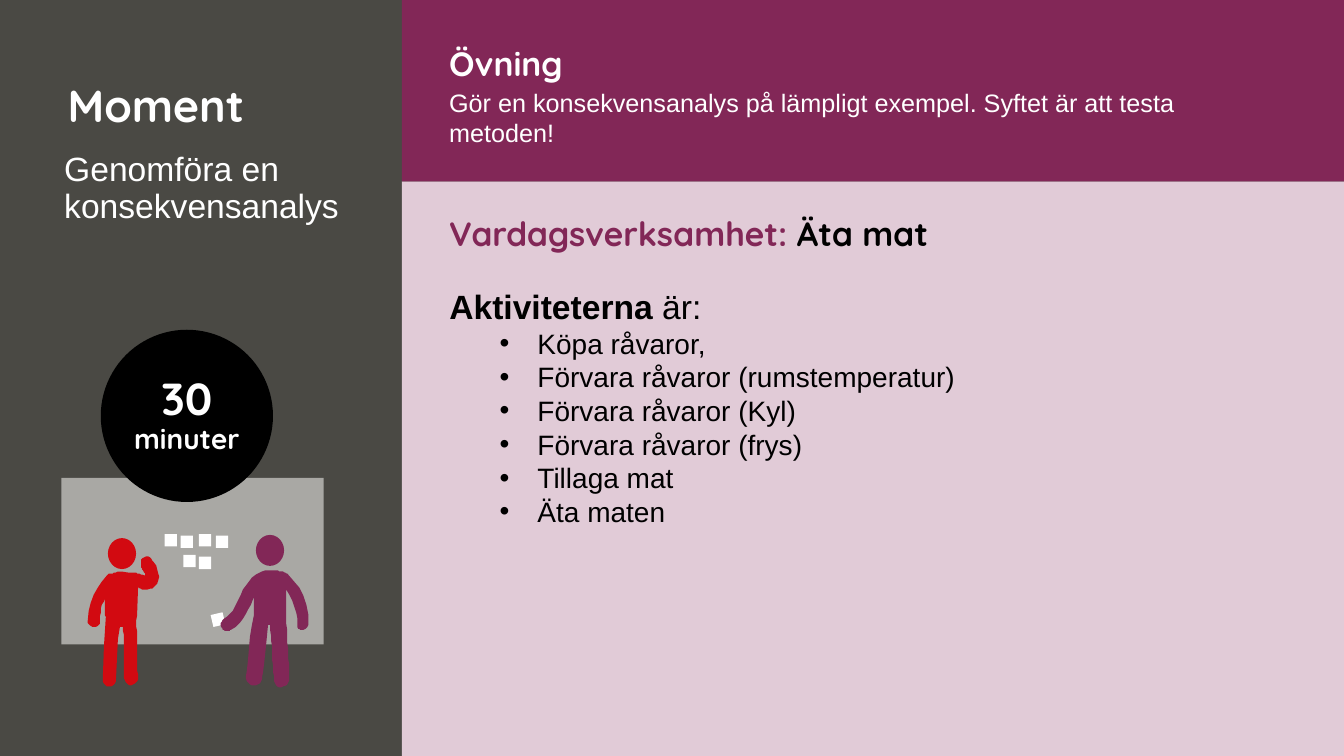
from lxml.etree import SubElement
from pptx import Presentation
from pptx.dml.color import RGBColor
from pptx.enum.shapes import MSO_SHAPE
from pptx.enum.text import MSO_ANCHOR, MSO_AUTO_SIZE, PP_ALIGN
from pptx.oxml.ns import qn
from pptx.util import Cm, Pt

BODY_FONT, HEADING_FONT = "Arial", "Quicksand"
PLUM, PINK, RED = "822757", "E1CBD7", "D20A11"
GREY, DARK, WHITE, BLACK = "A9A8A4", "4A4944", "FFFFFF", "000000"
OUTLINE_UNIT = Cm(0.0254)
TEXT_LEFT = 11.07
PANEL_LEFT, PANEL_WIDTH, BANNER_HEIGHT = 10.13, 23.74, 4.57
NOTE_SIZE = 0.31

ACTIVITIES = [
    "Köpa råvaror,",
    "Förvara råvaror (rumstemperatur)",
    "Förvara råvaror (Kyl)",
    "Förvara råvaror (frys)",
    "Tillaga mat",
    "Äta maten",
]
NOTES = [(4.15, 13.46), (4.55, 13.5), (5.01, 13.46), (5.44, 13.5), (5.01, 14.03), (4.62, 13.98)]

# Two numbers are a corner; six are a Bézier curve's two handles and its end.
REACHING_BODY = [
    (285, 569), (283, 568, 281, 567, 279, 567), (276, 566, 272, 566, 269, 566),
    (263, 566, 257, 567, 254, 570), (246, 576, 241, 585, 237, 594),
    (233, 602, 229, 610, 222, 614), (219, 616, 218, 620, 220, 623),
    (221, 625, 223, 626, 225, 626), (226, 626, 228, 626, 229, 625),
    (239, 619, 244, 609, 249, 600), (252, 592), (252, 610),
    (248, 628, 245, 663, 244, 671), (244, 676, 248, 680, 252, 680),
    (257, 680, 260, 677, 260, 672), (261, 665, 264, 638, 266, 620), (268, 620),
    (269, 631, 270, 641, 270, 651), (271, 660, 271, 668, 272, 674),
    (272, 678, 275, 682, 279, 682), (284, 681, 288, 677, 287, 673),
    (287, 667, 287, 659, 286, 650), (285, 638, 285, 625, 284, 613), (284, 585),
    (291, 595, 295, 608, 295, 619), (295, 623, 296, 625, 299, 625),
    (303, 625, 306, 622, 306, 619), (307, 600, 299, 581, 285, 569),
]
THINKING_BODY = [
    (152, 557), (152, 557, 150, 552, 145, 552), (139, 553, 140, 558, 140, 558),
    (139, 560, 140, 563, 141, 565), (144, 568, 144, 570, 144, 571),
    (141, 570), (138, 569, 135, 569, 134, 568), (127, 568), (121, 567),
    (117, 567, 113, 568, 110, 569), (109, 569, 107, 569, 106, 571),
    (96, 582, 87, 596, 87, 616), (87, 620, 90, 622, 93, 622),
    (97, 622, 100, 619, 99, 616), (99, 607, 101, 600, 104, 594), (104, 610),
    (105, 612), (103, 643), (103, 645), (102, 674),
    (102, 678, 104, 681, 108, 681), (112, 681, 115, 678, 115, 675),
    (117, 634), (119, 622), (122, 622), (123, 630, 123, 639, 123, 647),
    (123, 673), (124, 677, 127, 680, 130, 680), (134, 679, 137, 676, 137, 672),
    (136, 666, 136, 657, 136, 647), (136, 636, 136, 625, 135, 616),
    (136, 611), (137, 583), (139, 584, 141, 585, 144, 585),
    (149, 585, 153, 583, 156, 579), (159, 573, 158, 565, 152, 557),
]


def color(value):
    return RGBColor.from_string(value)


def flatten(segments, steps=6):
    """Turn corners and Bézier curves into plain points."""
    points = [segments[0]]
    for segment in segments[1:]:
        if len(segment) == 2:
            points.append(segment)
            continue
        anchors = [points[-1], segment[:2], segment[2:4], segment[4:]]
        for step in range(1, steps + 1):
            t = step / steps
            weights = ((1 - t) ** 3, 3 * t * (1 - t) ** 2, 3 * t * t * (1 - t), t**3)
            points.append(tuple(
                sum(weight * anchor[axis] for weight, anchor in zip(weights, anchors))
                for axis in (0, 1)
            ))
    return points


def add_span(para, text, size=24, fill=WHITE, font=BODY_FONT, bold=False):
    span = para.add_run()
    span.text = text
    span.font.size, span.font.name, span.font.bold = Pt(size), font, bold
    span.font.color.rgb = color(fill)


class ExerciseSlide:
    def __init__(self, deck):
        self.page = deck.slides.add_slide(deck.slide_layouts[1])
        self.page.background.fill.solid()
        self.page.background.fill.fore_color.rgb = color(DARK)

    def paint(self, shape, fill):
        shape.fill.solid()
        shape.fill.fore_color.rgb = color(fill)
        shape.line.fill.background()
        shape.shadow.inherit = False
        return shape

    def shape(self, left, top, width, height, fill, kind=MSO_SHAPE.RECTANGLE):
        sides = (Cm(side) for side in (left, top, width, height))
        return self.paint(self.page.shapes.add_shape(kind, *sides), fill)

    def outline(self, segments, fill):
        start, *points = flatten(segments)
        builder = self.page.shapes.build_freeform(*start, scale=OUTLINE_UNIT)
        builder.add_line_segments(points, close=True)
        return self.paint(builder.convert_to_shape(), fill)

    def placeholder(self, index, left, top, width, height):
        """Move a placeholder into place and in front of the panels."""
        box = self.page.placeholders[index]
        box.left, box.top, box.width, box.height = map(Cm, (left, top, width, height))
        box.element.getparent().append(box.element)
        box.text_frame.auto_size = MSO_AUTO_SIZE.NONE
        return box.text_frame

    def text_box(self, left, top, width, height):
        box = self.page.shapes.add_textbox(Cm(left), Cm(top), Cm(width), Cm(height))
        box.text_frame.word_wrap = True
        return box.text_frame

    def paragraph(self, frame, first=True, align=PP_ALIGN.LEFT, spacing=1.0, bullet=None):
        para = frame.paragraphs[0] if first else frame.add_paragraph()
        para.alignment, para.line_spacing, para.space_before = align, spacing, Pt(0)
        properties = para._p.get_or_add_pPr()
        properties.set("marL", str(Cm(2.22 if bullet else 0)))
        properties.set("indent", str(Cm(-0.95 if bullet else 0)))
        if bullet:
            para.level = 1
            SubElement(properties, qn("a:buFont")).set("typeface", BODY_FONT)
            SubElement(properties, qn("a:buChar")).set("char", bullet)
        else:
            SubElement(properties, qn("a:buNone"))
        return para

    def heading(self, frame, text, **style):
        para = self.paragraph(frame, spacing=0.9)
        add_span(para, text, font=HEADING_FONT, bold=True, **style)
        return para


def main():
    deck = Presentation()
    deck.slide_width, deck.slide_height = Cm(33.87), Cm(19.05)
    slide = ExerciseSlide(deck)

    slide.shape(PANEL_LEFT, BANNER_HEIGHT, PANEL_WIDTH, 14.48, PINK)
    slide.shape(PANEL_LEFT, 0, PANEL_WIDTH, BANNER_HEIGHT, PLUM)

    title = slide.placeholder(0, 1.45, 2.01, 6.32, 1.42)
    title.vertical_anchor = MSO_ANCHOR.MIDDLE
    slide.heading(title, "Moment", size=32)
    subtitle = slide.text_box(1.37, 3.73, 7.49, 2.11)
    add_span(slide.paragraph(subtitle, spacing=0.9), "Genomföra en konsekvensanalys")

    slide.heading(slide.text_box(TEXT_LEFT, 1.07, 4.11, 1.02), "Övning")
    task = slide.paragraph(slide.text_box(TEXT_LEFT, 2.08, 21.44, 1.8))
    add_span(task, "Gör en konsekvensanalys på lämpligt exempel. Syftet är att testa metoden!", size=18)

    topic = slide.heading(slide.text_box(TEXT_LEFT, 5.36, 15.82, 0.38), "Vardagsverksamhet: ", fill=PLUM)
    add_span(topic, "Äta mat", fill=BLACK, font=HEADING_FONT, bold=True)
    activities = slide.placeholder(1, TEXT_LEFT, 7.08, 22.02, 6.43)
    intro = slide.paragraph(activities)
    add_span(intro, "Aktiviteterna", fill=BLACK, bold=True)
    add_span(intro, " är:", fill=BLACK)
    for activity in ACTIVITIES:
        add_span(slide.paragraph(activities, first=False, bullet="•"), activity, size=20, fill=BLACK)

    slide.shape(1.55, 12.04, 6.61, 4.2, GREY)
    for left, top in NOTES:
        slide.shape(left, top, NOTE_SIZE, NOTE_SIZE, WHITE)
    slide.shape(5.34, 15.46, NOTE_SIZE, NOTE_SIZE, WHITE).rotation = 347
    for head_left, head_top, body, fill in (
        (6.45, 13.48, REACHING_BODY, PLUM),
        (2.72, 13.56, THINKING_BODY, RED),
    ):
        slide.shape(head_left, head_top, 0.71, 0.78, fill, MSO_SHAPE.OVAL)
        slide.outline(body, fill)

    timer = slide.shape(2.54, 8.31, 4.34, 4.34, BLACK, MSO_SHAPE.OVAL).text_frame
    timer.word_wrap, timer.vertical_anchor = True, MSO_ANCHOR.MIDDLE
    timer.margin_left = timer.margin_top = timer.margin_right = timer.margin_bottom = 0
    duration = slide.heading(timer, "30", size=32)
    duration.alignment = PP_ALIGN.CENTER
    add_span(duration, " minuter", size=20, font=HEADING_FONT, bold=True)

    deck.save("out.pptx")


if __name__ == "__main__":
    main()
